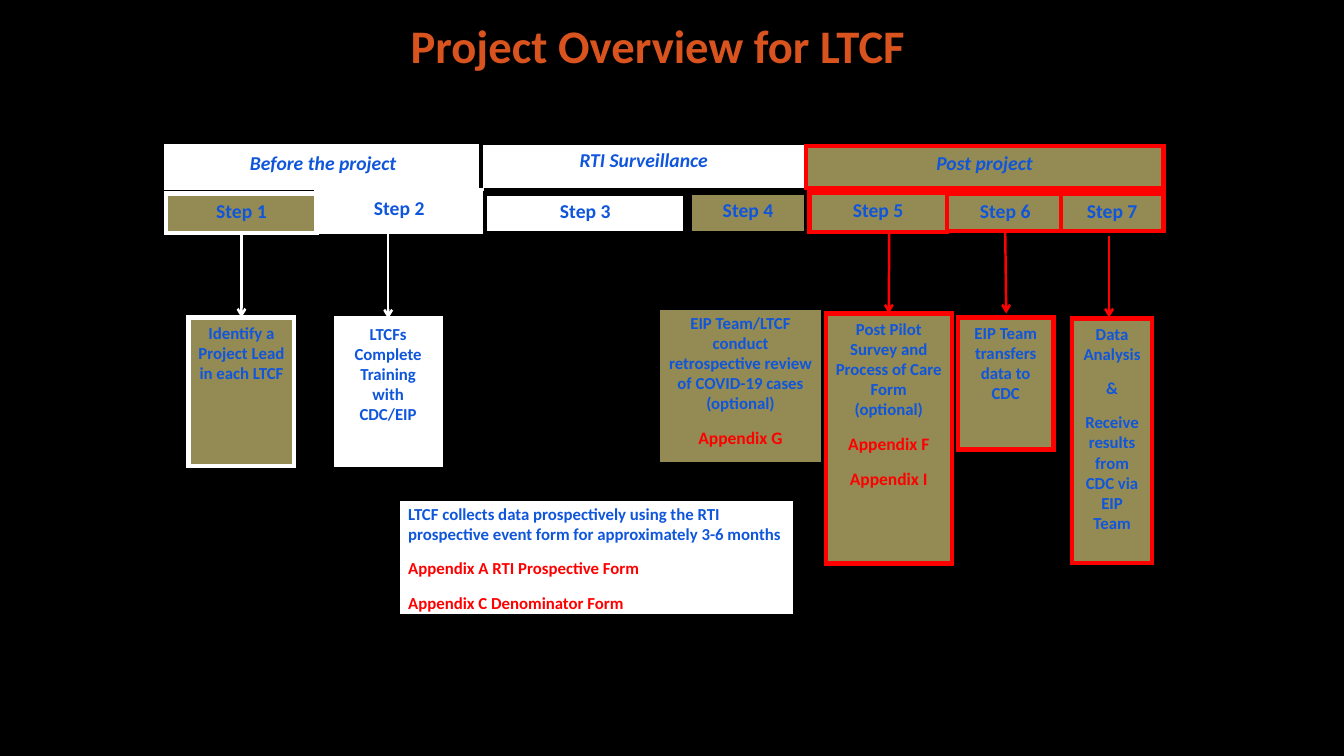
from dataclasses import dataclass

from lxml.etree import SubElement
from pptx import Presentation
from pptx.dml.color import RGBColor
from pptx.enum.shapes import MSO_CONNECTOR, MSO_SHAPE
from pptx.enum.text import MSO_ANCHOR, PP_ALIGN
from pptx.oxml.ns import qn
from pptx.util import Pt

PX = 9144  # one px is a hundredth of an inch


@dataclass(frozen=True)
class Theme:
    font: str = "Calibri"
    black: str = "000000"
    white: str = "FFFFFF"
    red: str = "FF0000"
    olive: str = "948A54"
    blue: str = "0F56DC"
    orange: str = "D9531E"
    title_size: float = 33.3
    heading_size: float = 14
    body_size: float = 12
    appendix_size: float = 12.5
    border: float = 3
    arrow: float = 1.75


theme = Theme()


def write(paragraph, text, color, size, align=PP_ALIGN.CENTER, italic=False):
    paragraph.text = text
    paragraph.alignment = align
    formats = {"name": theme.font, "size": Pt(size), "bold": True, "italic": italic}
    for attribute, value in formats.items():
        setattr(paragraph.font, attribute, value)
    paragraph.font.color.rgb = RGBColor.from_string(color)


def add_box(bounds, fill, border, lines, size, align=PP_ALIGN.CENTER, italic=False):
    shape = slide.shapes.add_shape(MSO_SHAPE.RECTANGLE, *(value * PX for value in bounds))
    shape.shadow.inherit = False
    shape.fill.solid()
    shape.fill.fore_color.rgb = RGBColor.from_string(fill)
    shape.line.color.rgb = RGBColor.from_string(border)
    shape.line.width = Pt(theme.border)
    SubElement(shape._element.spPr.find(qn("a:ln")), qn("a:miter"), lim="800000")
    frame = shape.text_frame
    frame.word_wrap = True
    frame.vertical_anchor = MSO_ANCHOR.TOP
    for index, text in enumerate(lines):
        paragraph = frame.add_paragraph() if index else frame.paragraphs[0]
        paragraph.space_after = Pt(10)
        color, text_size = theme.blue, size
        if text.startswith("Appendix"):
            color = theme.red
            if align == PP_ALIGN.CENTER:
                text_size = theme.appendix_size
        write(paragraph, text, color, text_size, align, italic)
    return shape


presentation = Presentation()
presentation.slide_width = 1333 * PX
presentation.slide_height = 750 * PX
slide = presentation.slides.add_slide(presentation.slide_layouts[6])
slide.background.fill.solid()
slide.background.fill.fore_color.rgb = RGBColor.from_string(theme.black)

# Title
title = slide.shapes.add_textbox(117 * PX, 3 * PX, 1071 * PX, 74 * PX).text_frame
title.word_wrap = True
title.vertical_anchor = MSO_ANCHOR.BOTTOM
title.paragraphs[0].line_spacing = Pt(35.7)
write(title.paragraphs[0], "Project Overview for LTCF", theme.orange, theme.title_size)

# Phase bands
phases = [
    ("Before the project", (165, 145, 311, 41), theme.white, theme.white),
    ("RTI Surveillance", (477, 142, 323, 47), theme.white, theme.black),
    ("Post project", (799, 145, 355, 42), theme.olive, theme.red),
]
for name, bounds, fill, border in phases:
    add_box(bounds, fill, border, [name], theme.heading_size, italic=True)

# Arrows, behind the boxes they link
arrows = {}
for step, color, *ends in [
    (1, theme.white, 239, 231, 239, 315),
    (2, theme.white, 385, 231, 385, 315),
    (3, theme.black, 584, 193, 582, 495),
    (4, theme.black, 736, 229, 736, 311),
    (5, theme.red, 882, 229, 882, 311),
    (6, theme.red, 998, 229, 998, 311),
    (7, theme.red, 1100, 234, 1100, 315),
]:
    arrow = slide.shapes.add_connector(MSO_CONNECTOR.STRAIGHT, *(value * PX for value in ends))
    arrow.line.color.rgb = RGBColor.from_string(color)
    arrow.line.width = Pt(theme.arrow)
    properties = arrow._element.spPr
    SubElement(properties.find(qn("a:ln")), qn("a:tailEnd"), type="arrow")
    SubElement(properties, qn("a:effectLst"))
    arrows[step] = arrow

# Step headings
steps = {}
for step, (bounds, fill, border) in enumerate([
    ((165, 192, 149, 39), theme.olive, theme.white),
    ((314, 189, 164, 41), theme.white, theme.white),
    ((481, 192, 199, 39), theme.white, theme.black),
    ((684, 191, 116, 40), theme.olive, theme.black),
    ((803, 191, 136, 39), theme.olive, theme.red),
    ((939, 192, 116, 37), theme.olive, theme.red),
    ((1052, 192, 102, 37), theme.olive, theme.red),
], start=1):
    steps[step] = add_box(bounds, fill, border, [f"Step {step}"], theme.heading_size)

# Step details
details = {}
for step, bounds, fill, border, align, lines in [
    (1, (187, 315, 105, 147), theme.olive, theme.white, PP_ALIGN.CENTER,
     ["Identify a Project Lead in each LTCF"]),
    (2, (333, 316, 104, 145), theme.white, theme.white, PP_ALIGN.CENTER,
     ["LTCFs Complete Training with CDC/EIP"]),
    (3, (395, 495, 394, 116), theme.white, theme.black, PP_ALIGN.LEFT,
     ["LTCF collects data prospectively using the RTI prospective event form "
      "for approximately 3-6 months",
      "Appendix A RTI Prospective Form", "Appendix C Denominator Form"]),
    (4, (653, 305, 163, 156), theme.olive, theme.black, PP_ALIGN.CENTER,
     ["EIP Team/LTCF conduct retrospective review of COVID-19 cases (optional)",
      "Appendix G"]),
    (6, (950, 315, 95, 131), theme.olive, theme.red, PP_ALIGN.CENTER,
     ["EIP Team transfers data to CDC"]),
    (5, (819, 311, 125, 248), theme.olive, theme.red, PP_ALIGN.CENTER,
     ["Post Pilot Survey and Process of Care Form (optional)",
      "Appendix F", "Appendix I"]),
    (7, (1063, 316, 80, 243), theme.olive, theme.red, PP_ALIGN.CENTER,
     ["Data Analysis", "&", "Receive results from CDC via EIP Team"]),
]:
    details[step] = add_box(bounds, fill, border, lines, theme.body_size, align)

# Joins where an arrow meets the middle of a side
for step in (1, 6):
    arrows[step].begin_connect(steps[step], 2)
for step in (1, 2, 5):
    arrows[step].end_connect(details[step], 0)

presentation.save("out.pptx")
